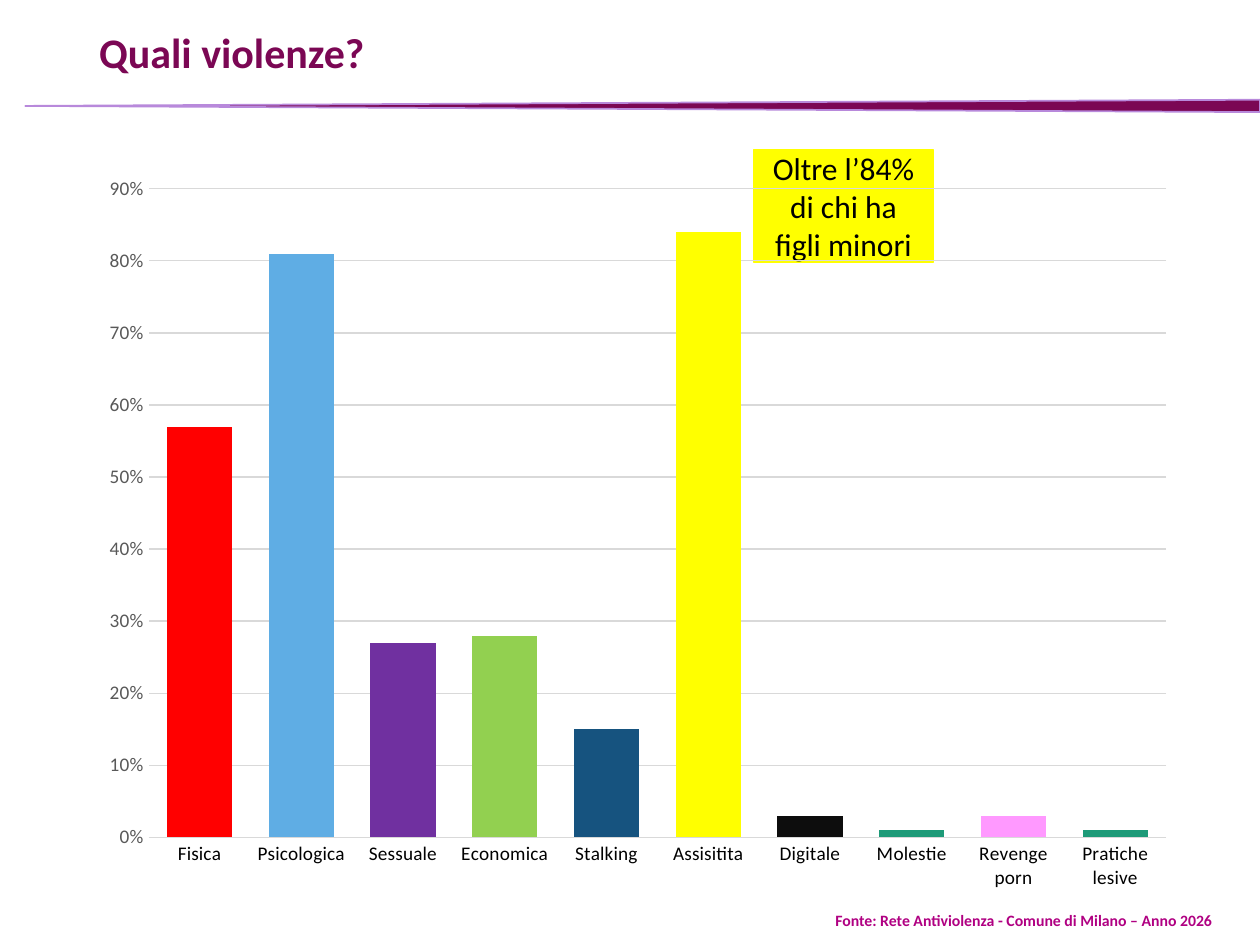
from dataclasses import dataclass

from pptx import Presentation
from pptx.chart.data import CategoryChartData as ChartData
from pptx.dml.color import RGBColor
from pptx.enum.chart import XL_CHART_TYPE as ChartType, XL_TICK_MARK as TickMark
from pptx.enum.shapes import MSO_SHAPE as Shape
from pptx.enum.text import MSO_ANCHOR as Anchor, PP_ALIGN as Align
from pptx.oxml import parse_xml
from pptx.oxml.ns import nsdecls, qn
from pptx.util import Cm, Pt


@dataclass(frozen=True)
class Theme:
    font: str = "Calibri"
    plum: str = "7B0754"
    lilac: str = "B889DB"
    magenta: str = "B00082"
    yellow: str = "FFFF00"
    black: str = "000000"
    grey: str = "595959"
    grid: str = "D9D9D9"
    teal: str = "1D9A78"
    title_size: int = 24
    callout_size: int = 18
    axis_size: int = 11
    chart_size: int = 10
    source_size: int = 9


@dataclass(frozen=True)
class Box:
    """A region of the slide, in centimetres."""
    left: float
    top: float
    width: float
    height: float

    def inner(self, left, top, width, height):
        return Box(self.left + left, self.top + top, width, height)

    def lengths(self):
        return [Cm(n) for n in (self.left, self.top, self.width, self.height)]


THEME = Theme()

# Type of violence, share of women, bar colour
VIOLENCE = [
    ("Fisica", 0.57, "FF0000"),
    ("Psicologica", 0.81, "5FADE4"),
    ("Sessuale", 0.27, "7030A0"),
    ("Economica", 0.28, "92D050"),
    ("Stalking", 0.15, "16537F"),
    ("Assisitita", 0.84, THEME.yellow),
    ("Digitale", 0.03, "0D0D0D"),
    ("Molestie", 0.01, THEME.teal),
    ("Revenge porn", 0.03, "FF99FF"),
    ("Pratiche lesive", 0.01, THEME.teal),
]


def style_font(font, size, color, bold=False):
    font.name = THEME.font
    font.size = Pt(size)
    font.bold = bold
    font.color.rgb = RGBColor.from_string(color)


def paint(shape, fill, line):
    shape.shadow.inherit = False
    shape.fill.solid()
    shape.fill.fore_color.rgb = RGBColor.from_string(fill)
    shape.line.color.rgb = RGBColor.from_string(line)
    shape.line.width = Pt(1)


def write(shape, text, size, color, bold=False, anchor=Anchor.TOP, align=Align.LEFT):
    frame = shape.text_frame
    frame.word_wrap = True
    frame.vertical_anchor = anchor
    frame.text = text
    para = frame.paragraphs[0]
    para.alignment = align
    style_font(para.runs[0].font, size, color, bold)
    return para


def add_header(page, box):
    title = page.shapes.add_textbox(*box.inner(1.75, 0.53, 21.9, 1.17).lengths())
    para = write(title, "Quali violenze?", THEME.title_size, THEME.plum, True, Anchor.MIDDLE)
    para.line_spacing = 0.9

    # Tall thin triangle, turned so that its tip points left
    wedge = page.shapes.add_shape(
        Shape.FLOWCHART_EXTRACT, *box.inner(12.83, -10.31, 0.25, 24.89).lengths())
    wedge.rotation = 270
    paint(wedge, THEME.plum, THEME.lilac)


def add_callout(page, box):
    callout = page.shapes.add_shape(Shape.RECTANGLE, *box.lengths())
    paint(callout, THEME.yellow, THEME.yellow)
    write(callout, "Oltre l’84% di chi ha figli minori", THEME.callout_size,
          THEME.black, anchor=Anchor.MIDDLE, align=Align.CENTER)


def set_plot_area(chart, x, y, w, h):
    area = chart.plots[0]._element.getparent()
    for layout in area.findall(qn("c:layout")):
        area.remove(layout)
    modes = '<c:xMode val="edge"/><c:yMode val="edge"/>'
    sizes = "".join(f'<c:{name} val="{value}"/>'
                    for name, value in zip("xywh", (x, y, w, h)))
    area.insert(0, parse_xml(
        f'<c:layout {nsdecls("c")}><c:manualLayout><c:layoutTarget val="inner"/>'
        f'{modes}{sizes}</c:manualLayout></c:layout>'))


def style_axis(axis, color):
    axis.major_tick_mark = axis.minor_tick_mark = TickMark.NONE
    style_font(axis.tick_labels.font, THEME.axis_size, color)


def style_rule(line):
    line.color.rgb = RGBColor.from_string(THEME.grid)
    line.width = Pt(0.75)


def add_violence_chart(page, box):
    names, shares, colors = zip(*VIOLENCE)
    data = ChartData(number_format="0%")
    data.categories = names
    data.add_series("Series 1", shares)
    chart = page.shapes.add_chart(ChartType.COLUMN_CLUSTERED, *box.lengths(), data).chart
    chart.has_title = chart.has_legend = False
    style_font(chart.font, THEME.chart_size, THEME.black)
    set_plot_area(chart, 0.055, 0.032, 0.926, 0.877)

    # Axes
    style_axis(chart.category_axis, THEME.black)
    style_rule(chart.category_axis.format.line)
    shares_axis = chart.value_axis
    style_axis(shares_axis, THEME.grey)
    shares_axis.format.line.fill.background()
    style_rule(shares_axis.major_gridlines.format.line)
    shares_axis.minimum_scale, shares_axis.maximum_scale = 0, 0.9
    shares_axis.major_unit = 0.1
    shares_axis.tick_labels.number_format = "0%"
    shares_axis.tick_labels.number_format_is_linked = False

    # Bars
    plot = chart.plots[0]
    plot.gap_width, plot.overlap = 56, 21
    plot.vary_by_categories = False
    bars = plot.series[0]
    bars.format.fill.solid()
    bars.format.fill.fore_color.rgb = RGBColor.from_string(THEME.teal)
    for index, color in enumerate(colors):
        if color != THEME.teal:
            fill = bars.points[index].format.fill
            fill.solid()
            fill.fore_color.rgb = RGBColor.from_string(color)


def add_source(page, box):
    source = page.shapes.add_textbox(*box.lengths())
    write(source, "Fonte: Rete Antiviolenza - Comune di Milano – Anno 2026",
          THEME.source_size, THEME.magenta, True)


def main():
    deck = Presentation()
    deck.slide_width, deck.slide_height = Cm(25.4), Cm(19.05)
    page = deck.slides.add_slide(deck.slide_layouts[6])
    add_header(page, Box(0, 0, 25.4, 2.5))
    add_callout(page, Box(15.19, 3.02, 3.63, 2.26))
    add_violence_chart(page, Box(1.78, 3.33, 22.15, 14.91))
    add_source(page, Box(16.59, 18.24, 8.81, 0.64))
    deck.save("out.pptx")


if __name__ == "__main__":
    main()
